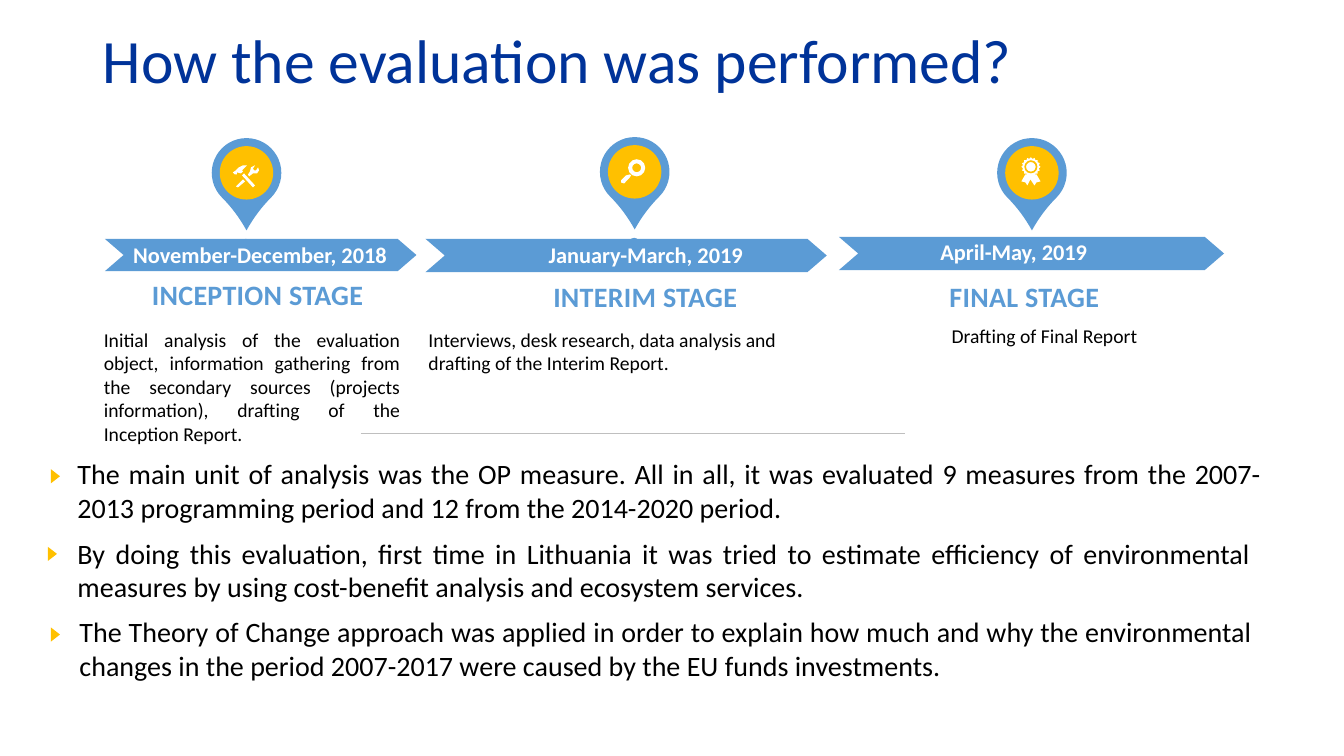
from lxml import etree
from pptx import Presentation
from pptx.dml.color import RGBColor
from pptx.enum.shapes import MSO_CONNECTOR as CONN, MSO_SHAPE as SHP
from pptx.enum.text import MSO_ANCHOR as ANCHOR, PP_ALIGN as AL
from pptx.oxml.ns import qn
from pptx.util import Inches, Pt

COLORS = {"title": "003399", "blue": "5B9BD5", "gold": "FFC000",
          "white": "FFFFFF", "text": "000000", "rule": "BFBFBF"}

HAMMER = [(17, 26), (21, 27), (23, 25), (22, 24), (27, 19), (23, 19),
          (19, 21), (16, 24), (13, 26), (15, 28), (17, 28)]
HAMMER_HANDLE = [(24, 27), (22, 29), (33, 41), (35, 39)]
WRENCH = [(38, 21), (36, 24), (34, 24), (33, 22), (35, 19), (31, 21),
          (30, 25), (28, 28), (29, 30), (33, 27), (37, 27), (39, 24)]
WRENCH_HANDLE = [(17, 39), (16, 40), (18, 41), (25, 35), (23, 33)]
LENS_HANDLE = [(22, 29), (18, 30), (13, 35), (13, 37), (16, 38), (21, 33), (23, 30)]
RIBBONS = [(20, 28), (16, 35), (20, 36), (22, 39), (25, 33),
           (29, 39), (31, 36), (35, 35), (31, 28)]

STAGES = [
    {"bar": (1.04, 2.37, 3.09, 0.32), "pin": (2.1, 1.37), "icon": "tools",
     "date": ("November-December, 2018", (1.25, 2.39, 2.66, 0.27)),
     "name": ("INCEPTION STAGE", (1.25, 2.85, 2.61, 0.25)),
     "detail": ("Initial analysis of the evaluation object, information gathering "
                "from the secondary sources (projects information), drafting of the "
                "Inception Report.", (1.03, 3.25, 2.94, 1.18), AL.JUSTIFY, None)},
    {"bar": (4.22, 2.37, 3.98, 0.33), "pin": (5.95, 1.36), "icon": "lens",
     "date": ("January-March, 2019", (4.86, 2.39, 3.09, 0.27)),
     "name": ("INTERIM STAGE", (4.82, 2.87, 3.16, 0.25)),
     "detail": ("Interviews, desk research, data analysis and drafting of the "
                "Interim Report.", (4.25, 3.25, 4.07, 0.47), AL.LEFT, None)},
    {"bar": (8.32, 2.35, 3.82, 0.33), "pin": (9.89, 1.37), "icon": "medal",
     "date": ("April-May, 2019", (8.85, 2.36, 2.41, 0.27)),
     "name": ("FINAL STAGE", (8.38, 2.87, 3.56, 0.25)),
     "detail": ("Drafting of Final Report", (8.58, 3.27, 3.56, 0.19), AL.CENTER, Pt(13))},
]

FINDINGS = [
    ("The main unit of analysis was the OP measure. All in all, it was evaluated 9 "
     "measures from the 2007-2013 programming period and 12 from the 2014-2020 period.",
     (0.67, 4.48, 11.94, 0.77), (0.48, 4.68)),
    ("By doing this evaluation, first time in Lithuania it was tried to estimate "
     "efficiency of environmental measures by using cost-benefit analysis and "
     "ecosystem services.",
     (0.67, 5.27, 11.83, 0.77), (0.45, 5.45)),
    ("The Theory of Change approach was applied in order to explain how much and why "
     "the environmental changes in the period 2007-2017 were caused by the EU funds "
     "investments.",
     (0.69, 6.05, 11.83, 0.77), (0.48, 6.25)),
]


def rgb(name):
    return RGBColor.from_string(COLORS[name])


def paint(sp, color):
    sp.shadow.inherit = False
    sp.fill.solid()
    sp.fill.fore_color.rgb = rgb(color)
    sp.line.fill.background()


def add_preset(s, kind, box, color, adj=None, rotation=0):
    sp = s.shapes.add_shape(kind, *map(Inches, box))
    paint(sp, color)
    if adj is not None:
        sp.adjustments[0] = adj
    sp.rotation = rotation


def add_outline(s, x, y, points):
    fb = s.shapes.build_freeform(*points[0], scale=Inches(0.01))
    fb.add_line_segments(points[1:], close=True)
    paint(fb.convert_to_shape(Inches(x), Inches(y)), "white")


def add_text(s, text, box, size, color, align=AL.LEFT, bold=None, inset=True,
             leading=None, spacing=None, anchor=ANCHOR.TOP):
    tf = s.shapes.add_textbox(*map(Inches, box)).text_frame
    tf.word_wrap = True
    tf.vertical_anchor = anchor
    if not inset:
        tf.margin_left = tf.margin_right = tf.margin_top = tf.margin_bottom = 0
    p = tf.paragraphs[0]
    p.alignment = align
    if leading:
        p.line_spacing = leading
    r = p.add_run()
    r.text = text
    r.font.name = "Calibri"
    r.font.size = Pt(size)
    r.font.bold = bold
    r.font.color.rgb = rgb(color)
    if spacing:
        r._r.get_or_add_rPr().set("spc", str(spacing))


def add_icon(s, icon, x, y):
    if icon == "tools":
        for points in (HAMMER, HAMMER_HANDLE, WRENCH, WRENCH_HANDLE):
            add_outline(s, x, y, points)
    elif icon == "lens":
        add_outline(s, x, y, LENS_HANDLE)
        add_preset(s, SHP.DONUT, (x + 0.2, y + 0.14, 0.17, 0.17), "white", 0.24)
    else:
        add_outline(s, x, y, RIBBONS)
        add_preset(s, SHP.STAR_16_POINT, (x + 0.16, y + 0.11, 0.19, 0.19), "white", 0.42)
        add_preset(s, SHP.DONUT, (x + 0.19, y + 0.14, 0.13, 0.13), "gold", 0.13)


def add_pin(s, x, y, icon):
    add_preset(s, SHP.TEAR, (x, y, 0.69, 0.69), "blue", 1.17, 135)
    add_preset(s, SHP.OVAL, (x + 0.08, y + 0.08, 0.53, 0.53), "gold")
    add_preset(s, SHP.OVAL, (x + 0.29, y + 1, 0.1, 0.1), "blue")
    add_icon(s, icon, x + 0.08, y + 0.08)


def add_stage(s, stage):
    add_preset(s, SHP.CHEVRON, stage["bar"], "blue", 0.58)
    add_pin(s, *stage["pin"], stage["icon"])
    add_text(s, *stage["date"], 16, "white", AL.CENTER, True, inset=False)
    add_text(s, *stage["name"], 20, "blue", AL.CENTER, True, inset=False,
             leading=Pt(17), spacing=20)
    text, box, align, leading = stage["detail"]
    add_text(s, text, box, 14, "text", align, inset=False, leading=leading)


def add_rule(s, x1, x2, y):
    line = s.shapes.add_connector(CONN.STRAIGHT, Inches(x1), Inches(y),
                                  Inches(x2), Inches(y))
    line.line.color.rgb = rgb("rule")
    line.line.width = Pt(0.75)
    etree.SubElement(line._element.spPr, qn("a:effectLst"))


def add_finding(s, text, box, marker):
    add_preset(s, SHP.ISOSCELES_TRIANGLE, (*marker, 0.14, 0.09), "gold", rotation=90)
    add_text(s, text, box, 20, "text", AL.JUSTIFY)


def main():
    prs = Presentation()
    prs.slide_width, prs.slide_height = Inches(13.33), Inches(7.5)
    s = prs.slides.add_slide(prs.slide_layouts[6])
    add_text(s, "How the evaluation was performed?", (0.92, 0, 11.5, 1.27), 44,
             "title", leading=0.9, anchor=ANCHOR.MIDDLE)
    for stage in STAGES:
        add_stage(s, stage)
    add_rule(s, 3.58, 8.98, 4.3)
    for finding in FINDINGS:
        add_finding(s, *finding)
    prs.save("out.pptx")


if __name__ == "__main__":
    main()
